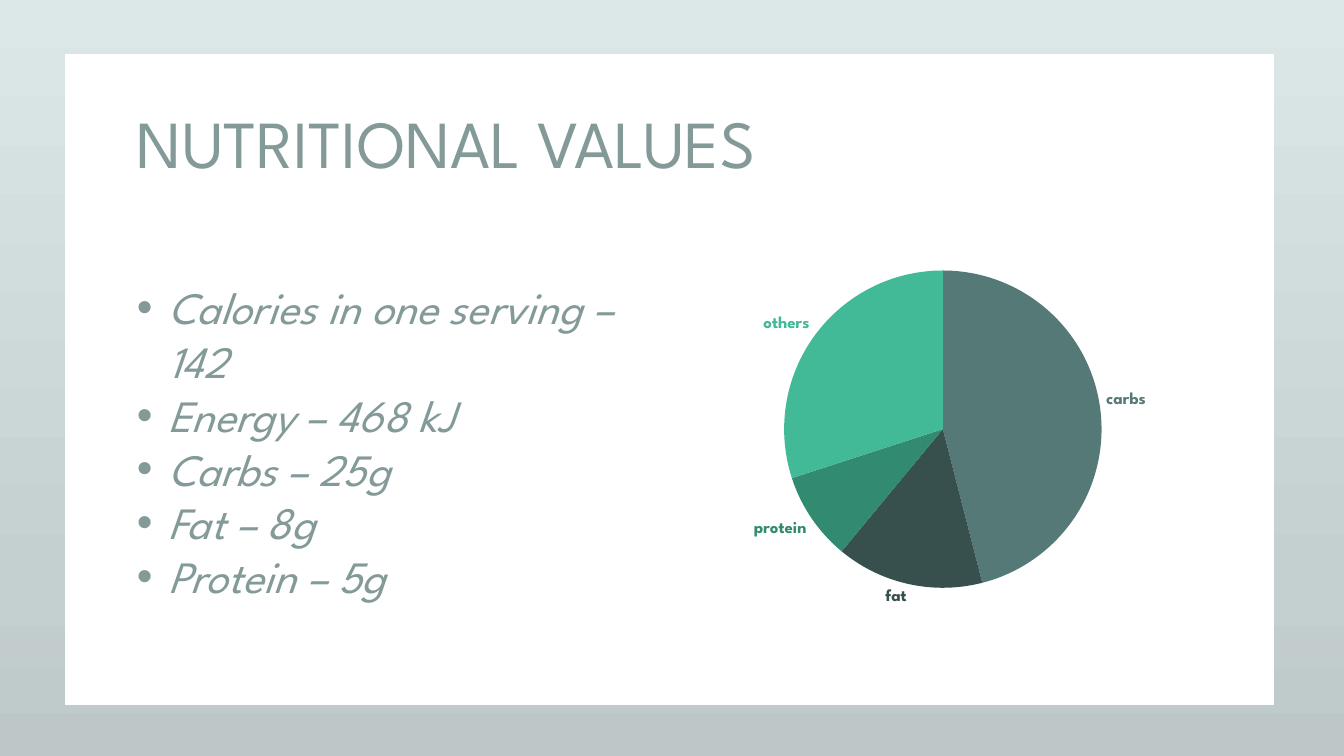
from copy import deepcopy

from lxml import etree
from pptx import Presentation
from pptx import util as u
from pptx.chart import data as cd
from pptx.dml import color as col
from pptx.enum import chart as ch, shapes, text
from pptx.oxml import ns

HUES = {
    "top": "DCE7E7", "mid": "C4CFCF", "base": "BDC7C7",
    "white": "FFFFFF", "text": "839A99",
    "carbs": "557977", "fat": "37504E", "protein": "328B71", "others": "42BA97",
}
FACTS = ["Calories in one serving – 142", "Energy – 468 kJ", "Carbs – 25g", "Fat – 8g", "Protein – 5g"]
SHARES = {"carbs": 46, "fat": 15, "protein": 9, "others": 30}


def hue(name):
    return col.RGBColor.from_string(HUES[name])


def style(font, size, color, bold=False, italic=False, face="League Spartan"):
    font.name, font.size = face, u.Pt(size)
    font.bold, font.italic = bold, italic
    font.color.rgb = hue(color)


def write(frame, lines, bullet=None, indent=0.31, **look):
    for i, line in enumerate(lines):
        para = frame.paragraphs[0] if i == 0 else frame.add_paragraph()
        if bullet:
            props = para._p.get_or_add_pPr()
            props.set("marL", str(u.Inches(indent)))
            props.set("indent", str(-u.Inches(indent)))
            etree.SubElement(props, ns.qn("a:buFont"), typeface="Arial")
            etree.SubElement(props, ns.qn("a:buChar"), char=bullet)
        run = para.add_run()
        run.text = line
        style(run.font, **look)


class Deck:
    def __init__(self, wide=13.33, high=7.5):
        self.prs = Presentation()
        self.prs.slide_width, self.prs.slide_height = u.Inches(wide), u.Inches(high)
        self.slide = self.prs.slides.add_slide(self.prs.slide_layouts[6])

    def area(self, *shares):
        sides = (self.prs.slide_width, self.prs.slide_height) * 2
        return [round(side * share / 100) for side, share in zip(sides, shares)]

    def backdrop(self, stops):
        fill = self.slide.background.fill
        fill.gradient()
        fill.gradient_angle = 270
        first = self.slide._element.find(".//" + ns.qn("a:gs"))
        for _ in range(len(stops) - len(fill.gradient_stops)):
            first.addnext(deepcopy(first))
        for stop, (place, name) in zip(fill.gradient_stops, stops):
            stop.position = place
            stop.color.rgb = hue(name)

    def panel(self, place, color):
        shape = self.slide.shapes.add_shape(shapes.MSO_SHAPE.RECTANGLE, *self.area(*place))
        shape.shadow.inherit = False
        shape.fill.solid()
        shape.fill.fore_color.rgb = hue(color)
        shape.line.color.rgb = hue(color)
        shape.line.width = u.Pt(1)

    def text(self, place, lines, **look):
        frame = self.slide.shapes.add_textbox(*self.area(*place)).text_frame
        frame.word_wrap = True
        frame.auto_size = text.MSO_AUTO_SIZE.SHAPE_TO_FIT_TEXT
        write(frame, lines, **look)

    def pie(self, place, shares, plot, size):
        data = cd.CategoryChartData()
        data.categories = list(shares)
        data.add_series("Series 1", list(shares.values()))
        chart = self.slide.shapes.add_chart(ch.XL_CHART_TYPE.PIE, *self.area(*place), data).chart
        chart.has_title = chart.has_legend = False
        chart.font.name, chart.font.size = "League Spartan", u.Pt(size)
        disc = chart.plots[0]
        disc.vary_by_categories = True
        for i, name in enumerate(shares):
            point = disc.series[0].points[i]
            point.format.fill.solid()
            point.format.fill.fore_color.rgb = hue(name)
            point.format.line.fill.background()
            style(point.data_label.font, size, name, bold=True)
            point.data_label.position = ch.XL_LABEL_POSITION.OUTSIDE_END
        root = chart._chartSpace
        for label in root.iter(ns.qn("c:dLbl")):
            label.find(ns.qn("c:showVal")).set("val", "0")
            label.find(ns.qn("c:showCatName")).set("val", "1")
            label.find(ns.qn("c:showPercent")).set("val", "0")
        frame = etree.Element(ns.qn("c:spPr"))
        etree.SubElement(frame, ns.qn("a:noFill"))
        etree.SubElement(etree.SubElement(frame, ns.qn("a:ln")), ns.qn("a:noFill"))
        root.find(ns.qn("c:txPr")).addprevious(frame)
        self.fit(root.find(".//" + ns.qn("c:plotArea")), plot)

    def fit(self, zone, plot):
        for old in zone.findall(ns.qn("c:layout")):
            zone.remove(old)
        layout = etree.Element(ns.qn("c:layout"))
        manual = etree.SubElement(layout, ns.qn("c:manualLayout"))
        rules = [("layoutTarget", "inner"), ("xMode", "edge"), ("yMode", "edge")]
        for tag, val in rules + list(zip("xywh", plot)):
            etree.SubElement(manual, ns.qn("c:" + tag), val=str(val))
        zone.insert(0, layout)


def main():
    deck = Deck()
    deck.backdrop([(0, "top"), (0.77, "mid"), (1, "base")])
    deck.panel((4.88, 7.2, 89.87, 86), "white")
    deck.text((9.45, 12.8, 51.6, 12.13), ["NUTRITIONAL VALUES"], size=48, color="text")
    deck.text((9.45, 36.4, 38.5, 44.4), FACTS, bullet="•", size=32, color="text", italic=True)
    deck.pie((18.9, 5.47, 68.34, 77.73), SHARES, plot=(0.57, 0.39, 0.36, 0.54), size=12)
    deck.prs.save("out.pptx")


if __name__ == "__main__":
    main()
